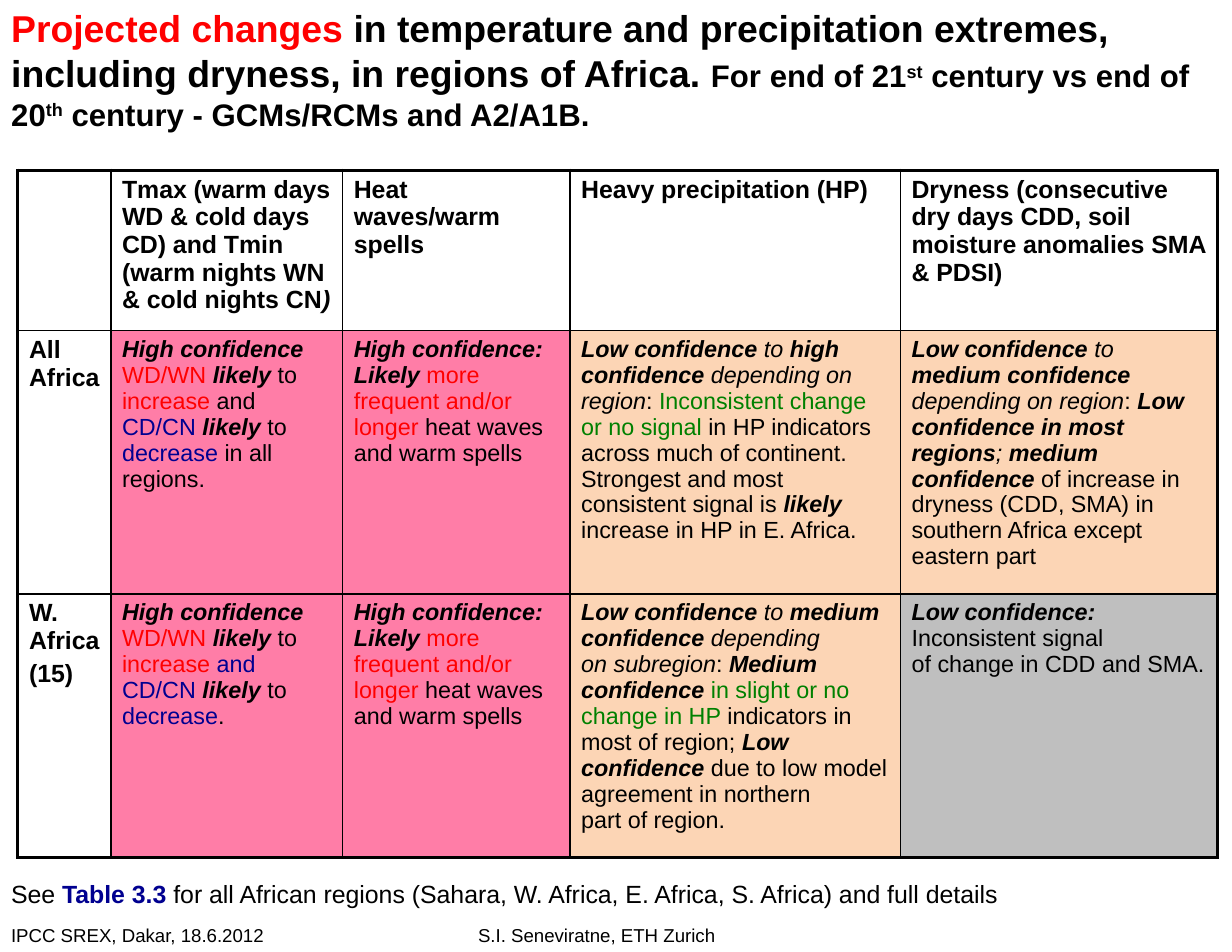
import dataclasses

import pptx
import pptx.dml.color
import pptx.enum.text
import pptx.oxml
import pptx.oxml.ns
import pptx.util
from pptx.util import Inches


@dataclasses.dataclass(frozen=True)
class Theme:
    font: str = "Arial"
    black: str = "000000"
    red: str = "FF0000"
    blue: str = "000090"
    green: str = "008000"
    pink: str = "FF7DA7"
    peach: str = "FCD5B5"
    gray: str = "BFBFBF"
    title_size: float = 24
    subtitle_size: float = 20
    heading_size: float = 16
    cell_size: float = 15
    footer_size: float = 12
    outer_line: float = 2.25
    inner_line: float = 1


THEME = Theme()
STYLES = {
    "plain": {},
    "bold": {"bold": True},
    "italic": {"italic": True},
    "strong": {"bold": True, "italic": True},
    "red": {"color": THEME.red},
    "blue": {"color": THEME.blue},
    "green": {"color": THEME.green},
    "blue bold": {"color": THEME.blue, "bold": True},
    "title": {"bold": True, "size": THEME.title_size},
    "red title": {"bold": True, "size": THEME.title_size, "color": THEME.red},
    "subtitle": {"bold": True, "size": THEME.subtitle_size},
    "ordinal": {"bold": True, "size": THEME.subtitle_size, "baseline": "30000"},
}


class SlideBuilder:
    def __init__(self, slide, theme):
        self.slide = slide
        self.theme = theme

    def add_paragraphs(self, text_frame, paragraphs, size, space_before=0):
        for index, runs in enumerate(paragraphs):
            paragraph = text_frame.add_paragraph() if index else text_frame.paragraphs[0]
            paragraph.alignment = pptx.enum.text.PP_ALIGN.LEFT
            if index and space_before:
                paragraph.space_before = pptx.util.Pt(space_before)
            for style, text in runs:
                run = paragraph.add_run()
                run.text = text
                self.format_run(run, size, STYLES[style])

    def format_run(self, run, size, style):
        values = {
            "name": self.theme.font,
            "size": pptx.util.Pt(style.get("size", size)),
            "bold": style.get("bold", False),
            "italic": style.get("italic", False),
        }
        for name, value in values.items():
            setattr(run.font, name, value)
        color = style.get("color", self.theme.black)
        run.font.color.rgb = pptx.dml.color.RGBColor.from_string(color)
        if "baseline" in style:
            run.font._element.set("baseline", style["baseline"])

    def title(self, left, top, width, height, runs):
        shape = self.slide.shapes.title
        place = {"left": left, "top": top, "width": width, "height": height}
        for name, value in place.items():
            setattr(shape, name, Inches(value))
        frame_values = {
            "word_wrap": True,
            "auto_size": pptx.enum.text.MSO_AUTO_SIZE.SHAPE_TO_FIT_TEXT,
            "vertical_anchor": pptx.enum.text.MSO_ANCHOR.TOP,
        }
        for name, value in frame_values.items():
            setattr(shape.text_frame, name, value)
        self.add_paragraphs(shape.text_frame, [runs], self.theme.title_size)

    def text(self, left, top, width, height, runs, size):
        shape = self.slide.shapes.add_textbox(
            Inches(left), Inches(top), Inches(width), Inches(height))
        shape.text_frame.word_wrap = False
        shape.text_frame.auto_size = pptx.enum.text.MSO_AUTO_SIZE.SHAPE_TO_FIT_TEXT
        self.add_paragraphs(shape.text_frame, [runs], size)

    def table(self, left, top, widths, heights, rows, fills):
        table = self.slide.shapes.add_table(
            len(heights), len(widths), Inches(left), Inches(top),
            Inches(sum(widths)), Inches(sum(heights))).table
        table.first_row = False
        table.horz_banding = False
        for column, width in zip(table.columns, widths):
            column.width = Inches(width)
        for row, height in zip(table.rows, heights):
            row.height = Inches(height)
        last_row, last_column = len(heights) - 1, len(widths) - 1
        for row_index, row in enumerate(rows):
            for column_index, paragraphs in enumerate(row):
                cell = table.cell(row_index, column_index)
                is_heading = row_index == 0 or column_index == 0
                size = self.theme.heading_size if is_heading else self.theme.cell_size
                self.add_paragraphs(cell.text_frame, paragraphs, size,
                                    3.6 if is_heading else 0)
                self.fill(cell, fills[row_index][column_index])
                self.borders(cell, {
                    "lnL": column_index == 0,
                    "lnR": column_index == last_column,
                    "lnT": row_index == 0,
                    "lnB": row_index == last_row,
                })

    def fill(self, cell, color):
        if color is None:
            cell.fill.background()
        else:
            cell.fill.solid()
            cell.fill.fore_color.rgb = pptx.dml.color.RGBColor.from_string(color)

    def borders(self, cell, edges):
        properties = cell._tc.get_or_add_tcPr()
        for position, (tag, is_outer) in enumerate(edges.items()):
            points = self.theme.outer_line if is_outer else self.theme.inner_line
            properties.insert(position, pptx.oxml.parse_xml(
                f'<a:{tag} {pptx.oxml.ns.nsdecls("a")} w="{pptx.util.Pt(points)}">'
                f'<a:solidFill><a:srgbClr val="{self.theme.black}"/></a:solidFill>'
                f'</a:{tag}>'))


TITLE = [
    ("red title", "Projected changes "),
    ("title", "in temperature and precipitation extremes, including dryness, "
              "in regions of Africa. "),
    ("subtitle", "For end of 21"), ("ordinal", "st"),
    ("subtitle", " century vs end of 20"), ("ordinal", "th"),
    ("subtitle", " century - GCMs/RCMs and A2/A1B."),
]
HEADINGS = [
    [],
    [[("bold", "Tmax (warm days WD & cold days CD) and Tmin "
               "(warm nights WN & cold nights CN"), ("strong", ")")]],
    [[("bold", "Heat waves/warm spells")]],
    [[("bold", "Heavy precipitation (HP)")]],
    [[("bold", "Dryness (consecutive dry days CDD, soil moisture anomalies SMA & PDSI)")]],
]
WARMING = [("strong", "High confidence "), ("red", "WD/WN "), ("strong", "likely "),
           ("plain", "to "), ("red", "increase ")]
COOLING = [("strong", "likely "), ("plain", "to "), ("blue", "decrease")]
HEAT_WAVES = [
    [("strong", "High confidence: Likely "), ("red", "more frequent and/or")],
    [("red", "longer "), ("plain", "heat waves and warm spells")],
]
LOW_TO = [("strong", "Low confidence "), ("italic", "to ")]
BY_REGION = [("italic", "depending on region"), ("plain", ": ")]
ALL_AFRICA = [
    [[("bold", "All Africa")]],
    [WARMING + [("plain", "and "), ("blue", "CD/CN ")] + COOLING
     + [("plain", " in all regions.")]],
    HEAT_WAVES,
    [LOW_TO + [("strong", "high confidence ")] + BY_REGION + [
        ("green", "Inconsistent change or no signal "),
        ("plain", "in HP indicators across much of continent. "
                  "Strongest and most consistent signal is "),
        ("strong", "likely "), ("plain", "increase in HP in E. Africa.")]],
    [LOW_TO + [("strong", "medium confidence ")] + BY_REGION + [
        ("strong", "Low confidence in most regions"), ("italic", "; "),
        ("strong", "medium confidence "),
        ("plain", "of increase in dryness (CDD, SMA) in southern Africa "
                  "except eastern part")]],
]
WEST_AFRICA = [
    [[("bold", "W. Africa")], [("bold", "(15)")]],
    [WARMING + [("blue", "and CD/CN ")] + COOLING + [("plain", ".")]],
    HEAT_WAVES,
    [LOW_TO + [("strong", "medium confidence "), ("italic", "depending")],
     [("italic", "on subregion"), ("plain", ": "), ("strong", "Medium confidence "),
      ("green", "in slight or no")],
     [("green", "change in HP "), ("plain", "indicators in most of region; "),
      ("strong", "Low confidence "), ("plain", "due to low model agreement in northern")],
     [("plain", "part of region.")]],
    [[("strong", "Low confidence: "), ("plain", "Inconsistent signal")],
     [("plain", "of change in CDD and SMA.")]],
]
FILLS = [
    [None] * 5,
    [None, THEME.pink, THEME.pink, THEME.peach, THEME.peach],
    [None, THEME.pink, THEME.pink, THEME.peach, THEME.gray],
]
DETAILS = [
    ("plain", "See "), ("blue bold", "Table 3.3 "),
    ("plain", "for all African regions (Sahara, W. Africa, E. Africa, S. Africa) "
              "and full details"),
]


def main():
    presentation = pptx.Presentation()
    presentation.slide_width = Inches(11)
    presentation.slide_height = Inches(8.5)
    slide = presentation.slides.add_slide(presentation.slide_layouts[5])
    builder = SlideBuilder(slide, THEME)
    builder.text(4.17, 8.2, 2.34, 0.3, [("plain", "S.I. Seneviratne, ETH Zurich")],
                 THEME.footer_size)
    builder.text(0, 8.2, 2.48, 0.3, [("plain", "IPCC SREX, Dakar, 18.6.2012")],
                 THEME.footer_size)
    builder.title(0, 0, 11.16, 1.25, TITLE)
    builder.table(0.16, 1.52, [0.83, 2.07, 2.03, 2.95, 2.83], [1.43, 2.35, 2.35],
                  [HEADINGS, ALL_AFRICA, WEST_AFRICA], FILLS)
    builder.text(0, 7.8, 9.09, 0.37, DETAILS, THEME.heading_size)
    presentation.save("out.pptx")


if __name__ == "__main__":
    main()
